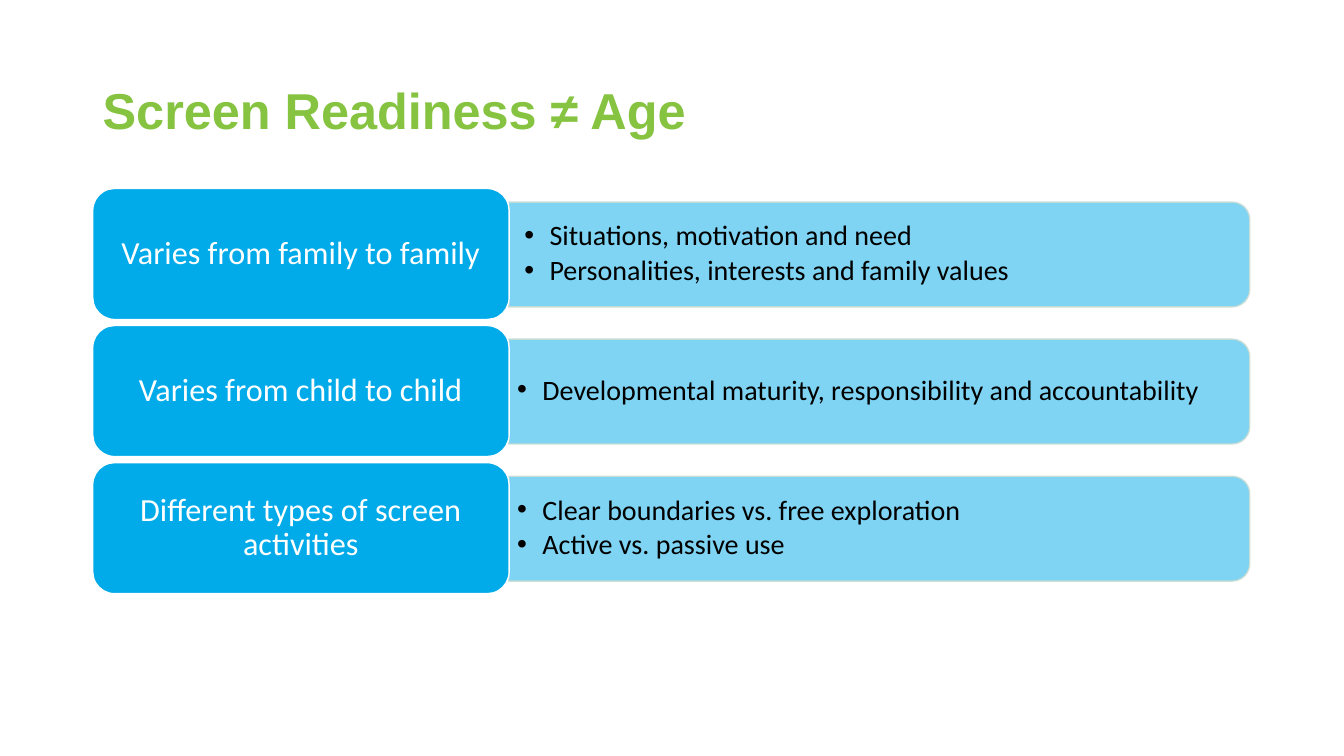
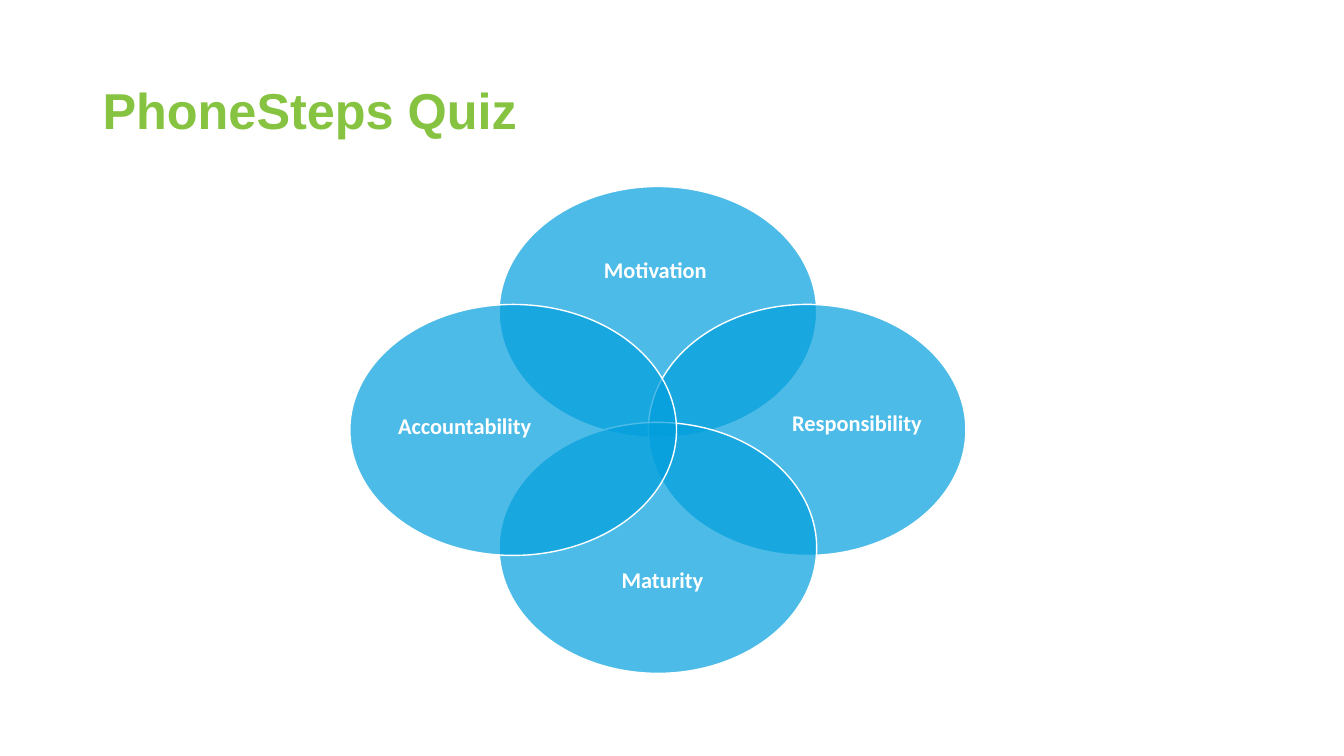
from lxml import etree
from pptx import Presentation
from pptx import util as u
from pptx.dml.color import RGBColor
from pptx.enum import shapes, text
from pptx.oxml import ns

PX = 9144
GREEN = RGBColor(0x85, 0xC3, 0x40)
BLUE = RGBColor(0x01, 0xAB, 0xE9)
DEEP_BLUE = RGBColor(0x02, 0x9F, 0xDD)
PALE_LINE = RGBColor(0xC9, 0xDD, 0xD5)
WHITE = RGBColor(0xFF, 0xFF, 0xFF)
BLACK = RGBColor(0, 0, 0)
PRESET = shapes.MSO_SHAPE
LEFT, CENTER = text.PP_ALIGN.LEFT, text.PP_ALIGN.CENTER
TOP, MIDDLE = text.MSO_ANCHOR.TOP, text.MSO_ANCHOR.MIDDLE

READINESS_ROWS = [
    ("Varies from family to family",
     ["Situations, motivation and need", "Personalities, interests and family values"], (15, 7)),
    ("Varies from child to child",
     ["Developmental maturity, responsibility and accountability"], (8, 4)),
    ("Different types of screen activities",
     ["Clear boundaries vs. free exploration", "Active vs. passive use"], (8, 4)),
]
QUIZ_ELLIPSES = [(148, 0, 315), (296, 117, 315), (148, 234, 315), (0, 117, 324)]
QUIZ_LABELS = [
    ("Motivation", 211, 64, 184),
    ("Maturity", 234, 372, 152),
    ("Accountability", -1, 219, 230),
    ("Responsibility", 391, 216, 224),
]


def px(*lengths):
    return [u.Emu(length * PX) for length in lengths]


def set_alpha(fill, percent):
    colour = fill._xPr.find(".//" + ns.qn("a:srgbClr"))
    etree.SubElement(colour, ns.qn("a:alpha"), val=str(percent * 1000))


def add_block(slide, preset, box, colour, line, fill_alpha=100, line_alpha=100):
    shape = slide.shapes.add_shape(preset, *px(*box))
    shape.shadow.inherit = False
    shape.fill.solid()
    shape.fill.fore_color.rgb = colour
    shape.line.color.rgb = line
    shape.line.width = u.Pt(1)
    for fill, percent in ((shape.fill, fill_alpha), (shape.line.fill, line_alpha)):
        if percent < 100:
            set_alpha(fill, percent)
    return shape


def add_bullet(paragraph):
    properties = paragraph._p.get_or_add_pPr()
    properties.set("marL", str(25 * PX))
    properties.set("indent", str(-25 * PX))
    etree.SubElement(properties, ns.qn("a:buFont"), typeface="Arial")
    etree.SubElement(properties, ns.qn("a:buChar"), char="•")


def write(shape, lines, size, colour, font="Calibri", bold=False, align=LEFT,
          anchor=MIDDLE, inset=(10, 5), spacing=0.9, bullets=False):
    frame = shape.text_frame
    frame.word_wrap = True
    frame.vertical_anchor = anchor
    frame.margin_left, frame.margin_top = px(*inset)
    frame.margin_right, frame.margin_bottom = px(*inset)
    frame.text = "\n".join(lines)
    for index, paragraph in enumerate(frame.paragraphs):
        if bullets:
            add_bullet(paragraph)
        paragraph.alignment = align
        paragraph.line_spacing = spacing
        if index:
            paragraph.space_before = u.Pt(3)
        paragraph.font.name = font
        paragraph.font.size = u.Pt(size)
        paragraph.font.bold = bold
        paragraph.font.color.rgb = colour


def add_text(slide, box, lines, size, colour, **style):
    write(slide.shapes.add_textbox(*px(*box)), lines, size, colour, **style)


def add_titled_slide(presentation, title):
    slide = presentation.slides.add_slide(presentation.slide_layouts[6])
    add_text(slide, (92, 40, 874, 145), [title], 36, GREEN, font="Arial", bold=True)
    return slide


def add_readiness_row(slide, box, label, points, inset):
    left, top, width, height = box
    label_width, bar_height = 413, 104
    bar_left, bar_width = left + label_width, width - label_width
    center_x, center_y = bar_left + bar_width // 2, top + height // 2
    bar_box = (center_x - bar_height // 2, center_y - bar_width // 2, bar_height, bar_width)
    bar = add_block(slide, PRESET.ROUND_2_SAME_RECTANGLE, bar_box, BLUE, PALE_LINE, 50, 90)
    bar.rotation = 90
    add_text(slide, (bar_left, center_y - 47, 712, 94), points, 20, BLACK,
             inset=inset, bullets=True)
    block = add_block(slide, PRESET.ROUNDED_RECTANGLE, (left, top, label_width, height), BLUE, WHITE)
    write(block, [label], 23, WHITE, align=CENTER, inset=(15, 6))


def add_readiness_slide(presentation):
    slide = add_titled_slide(presentation, "Screen Readiness ≠ Age")
    for index, row in enumerate(READINESS_ROWS):
        add_readiness_row(slide, (92, 187 + index * 136, 1148, 130), *row)


def add_quiz_diagram(slide, left, top):
    for x, y, width in QUIZ_ELLIPSES:
        add_block(slide, PRESET.OVAL, (left + x, top + y, width, 249), DEEP_BLUE, WHITE, 70)
    for label, x, y, width in QUIZ_LABELS:
        add_text(slide, (left + x, top + y, width, 40), [label], 16, WHITE,
                 bold=True, align=CENTER, anchor=TOP, spacing=1.0)


def add_quiz_slide(presentation):
    slide = add_titled_slide(presentation, "PhoneSteps Quiz")
    add_quiz_diagram(slide, 347, 185)


def main():
    presentation = Presentation()
    presentation.slide_width, presentation.slide_height = px(1333, 750)
    add_readiness_slide(presentation)
    add_quiz_slide(presentation)
    presentation.save("out.pptx")


if __name__ == "__main__":
    main()
